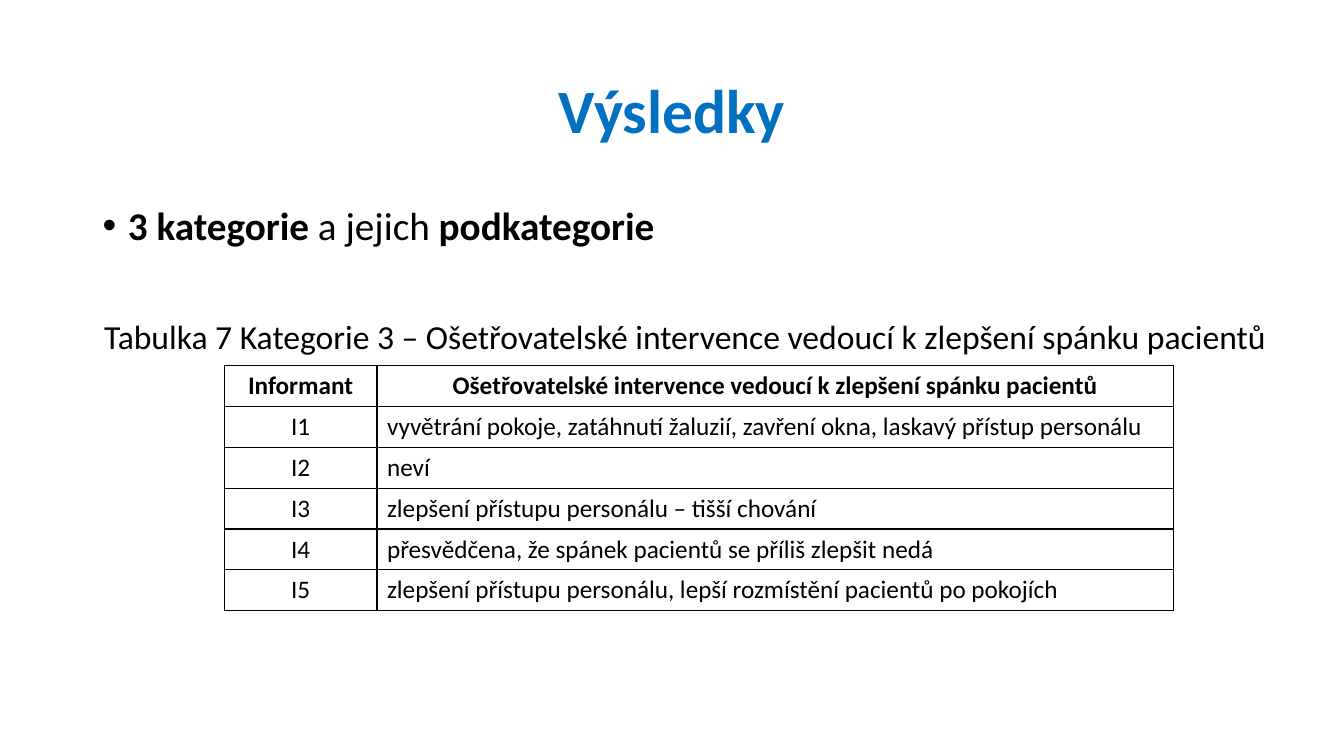
from lxml import etree
from pptx import Presentation
from pptx.dml.color import RGBColor
from pptx.enum.text import MSO_ANCHOR, MSO_AUTO_SIZE, PP_ALIGN
from pptx.oxml.ns import qn
from pptx.util import Cm, Pt

BLUE = RGBColor(0x00, 0x70, 0xC0)
BLACK = RGBColor(0x00, 0x00, 0x00)
WHITE = RGBColor(0xFF, 0xFF, 0xFF)
LEFT, CENTER = PP_ALIGN.LEFT, PP_ALIGN.CENTER
MIDDLE, TOP = MSO_ANCHOR.MIDDLE, MSO_ANCHOR.TOP
NO_AUTOFIT = MSO_AUTO_SIZE.NONE
FONT = "Calibri"

INTERVENTIONS = "Ošetřovatelské intervence vedoucí k zlepšení spánku pacientů"
ROWS = [
    ("Informant", INTERVENTIONS),
    ("I1", "vyvětrání pokoje, zatáhnutí žaluzií, zavření okna, laskavý přístup personálu"),
    ("I2", "neví"),
    ("I3", "zlepšení přístupu personálu – tišší chování"),
    ("I4", "přesvědčena, že spánek pacientů se příliš zlepšit nedá"),
    ("I5", "zlepšení přístupu personálu, lepší rozmístění pacientů po pokojích"),
]


def add_run(p, text, size=18, bold=False, color=BLACK):
    r = p.add_run()
    r.text = text
    r.font.name = FONT
    r.font.size = Pt(size)
    r.font.bold = bold
    r.font.color.rgb = color


def format_paragraph(p, align=LEFT, before=0, indent=0, bullet=False):
    pPr = p._p.get_or_add_pPr()
    pPr.set("marL", str(int(indent)))
    pPr.set("indent", str(-int(indent)))
    if not bullet:
        etree.SubElement(pPr, qn("a:buNone"))
    p.alignment = align
    p.line_spacing = 0.9
    p.space_before = Pt(before)


def place(sp, left, top, width, height, anchor):
    sp.left, sp.top, sp.width, sp.height = Cm(left), Cm(top), Cm(width), Cm(height)
    tf = sp.text_frame
    tf.auto_size = NO_AUTOFIT
    tf.vertical_anchor = anchor
    return tf


def add_title(s):
    tf = place(s.shapes.title, 2.33, 1.01, 29.21, 3.68, MIDDLE)
    p = tf.paragraphs[0]
    format_paragraph(p, CENTER)
    add_run(p, "Výsledky", size=44, bold=True, color=BLUE)


def add_body(s):
    tf = place(s.placeholders[1], 2.33, 5.08, 29.87, 12.09, TOP)
    p = tf.paragraphs[0]
    format_paragraph(p, indent=Cm(0.64), bullet=True)
    add_run(p, "3 kategorie ", size=28, bold=True)
    add_run(p, "a jejich ", size=28)
    add_run(p, "podkategorie", size=28, bold=True)

    caption = tf.add_paragraph()
    format_paragraph(caption, CENTER, before=51)
    add_run(caption, f"Tabulka 7 Kategorie 3 – {INTERVENTIONS}", size=24)


def set_borders(cell):
    tcPr = cell._tc.get_or_add_tcPr()
    for side in ("lnL", "lnR", "lnT", "lnB"):
        ln = etree.SubElement(tcPr, qn(f"a:{side}"), w=str(int(Pt(1))))
        fill = etree.SubElement(ln, qn("a:solidFill"))
        etree.SubElement(fill, qn("a:srgbClr"), val=str(BLACK))


def add_informant_table(s):
    row_height = Cm(1.03)
    frame = s.shapes.add_table(len(ROWS), 2, Cm(5.65), Cm(9.21), Cm(23.92),
                               row_height * len(ROWS))
    table = frame.table
    table.first_row = table.horz_banding = False
    for column, width in zip(table.columns, (3.85, 20.07)):
        column.width = Cm(width)
    for i, row in enumerate(ROWS):
        is_header = i == 0
        table.rows[i].height = row_height
        for j, text in enumerate(row):
            cell = table.cell(i, j)
            set_borders(cell)
            cell.fill.solid()
            cell.fill.fore_color.rgb = WHITE
            cell.vertical_anchor = MIDDLE if is_header else TOP
            p = cell.text_frame.paragraphs[0]
            p.alignment = CENTER if is_header or j == 0 else LEFT
            add_run(p, text, bold=is_header)


def main():
    prs = Presentation()
    prs.slide_width, prs.slide_height = Cm(33.87), Cm(19.05)
    s = prs.slides.add_slide(prs.slide_layouts[1])
    add_title(s)
    add_body(s)
    add_informant_table(s)
    prs.save("out.pptx")


if __name__ == "__main__":
    main()
